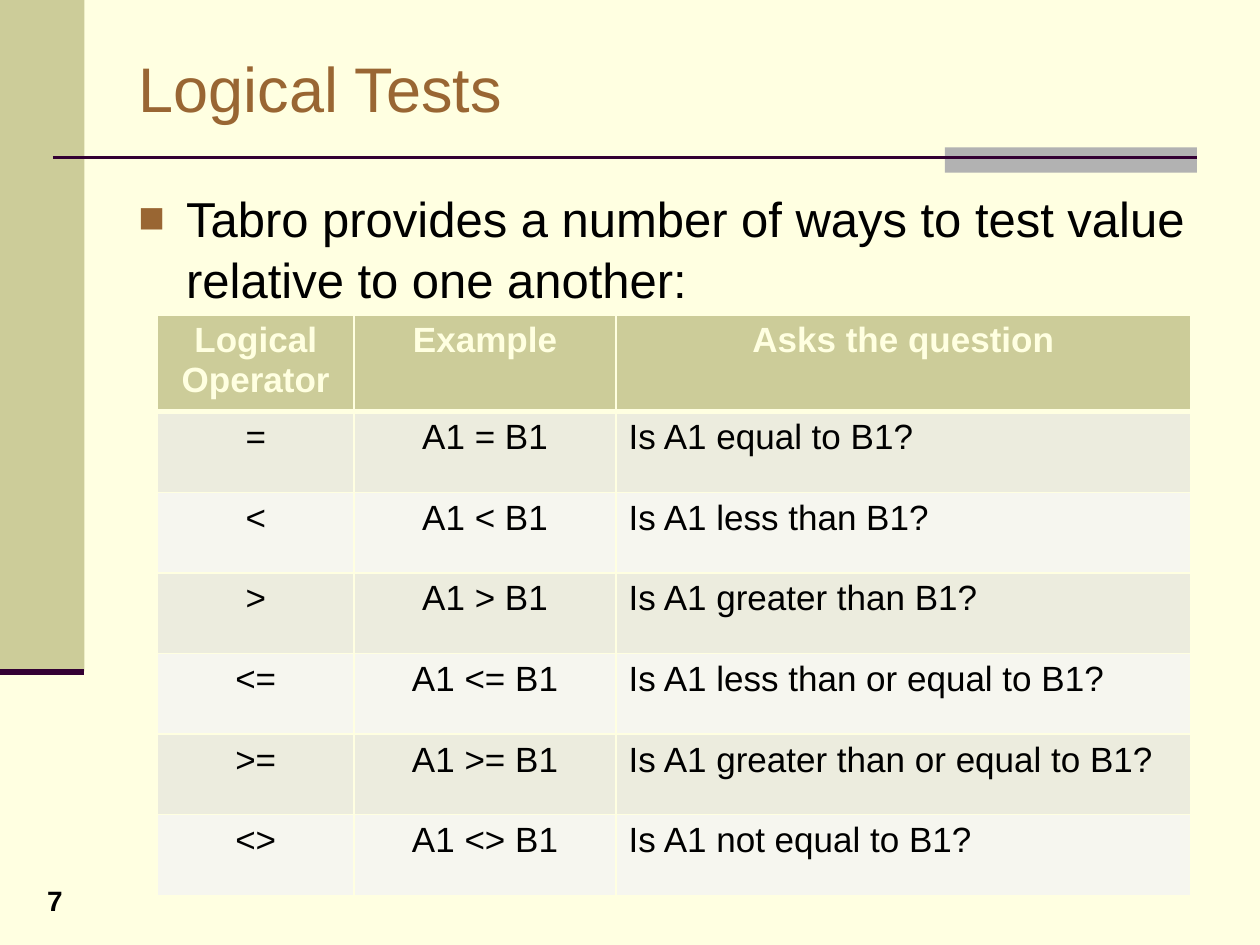
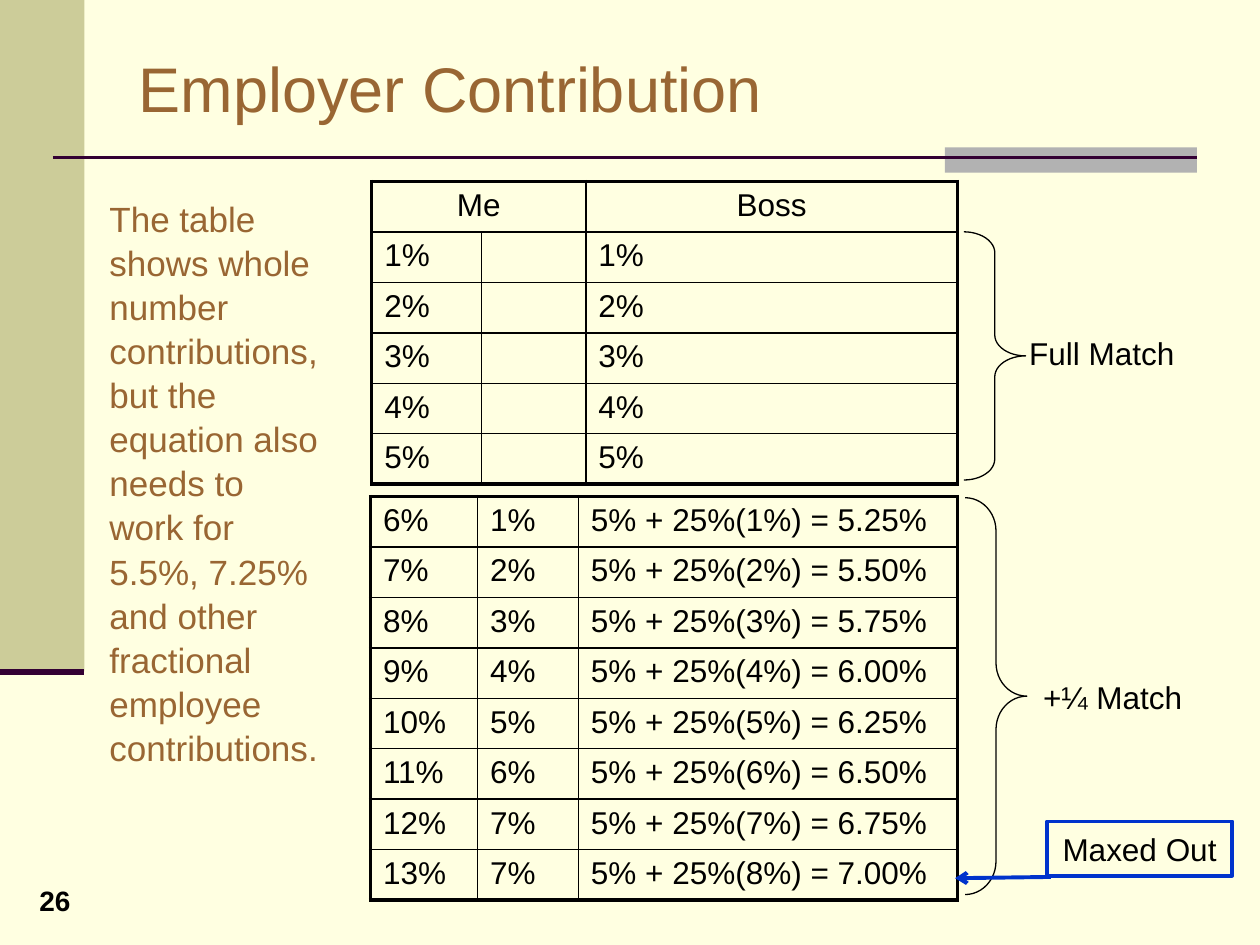
from dataclasses import dataclass

from lxml import etree
from pptx import Presentation
from pptx.dml.color import RGBColor
from pptx.enum.shapes import MSO_CONNECTOR, MSO_SHAPE, MSO_SHAPE_TYPE as ShapeType
from pptx.enum.text import MSO_ANCHOR, PP_ALIGN as Align
from pptx.oxml.ns import qn
from pptx.util import Inches, Pt


@dataclass(frozen=True)
class Theme:
    font: str = "Arial"
    paper: RGBColor = RGBColor(0xFF, 0xFF, 0xE1)
    sand: RGBColor = RGBColor(0xCC, 0xCC, 0x99)
    band_dark: RGBColor = RGBColor(0xEC, 0xEC, 0xDE)
    band_light: RGBColor = RGBColor(0xF6, 0xF6, 0xEF)
    gray: RGBColor = RGBColor(0xB2, 0xB2, 0xB2)
    plum: RGBColor = RGBColor(0x33, 0x00, 0x33)
    brown: RGBColor = RGBColor(0x99, 0x66, 0x33)
    blue: RGBColor = RGBColor(0x00, 0x33, 0xCC)
    black: RGBColor = RGBColor(0x00, 0x00, 0x00)
    title_size: int = 36
    body_size: int = 28
    note_size: int = 20
    label_size: int = 18
    number_size: int = 16


theme = Theme()


def add_text(slide, box, text, size, color=theme.black, bold=False, align=Align.LEFT):
    shape = slide.shapes.add_textbox(*map(Inches, box))
    shape.text_frame.word_wrap = True
    shape.text_frame.text = text
    paragraph = shape.text_frame.paragraphs[0]
    paragraph.alignment = align
    paragraph.line_spacing = 1.05
    font = paragraph.runs[0].font
    font.name, font.size, font.bold = theme.font, Pt(size), bold
    font.color.rgb = color
    return shape


def add_grid(slide, corner, widths, heights, rows, size, line_color, edge, header_line):
    """Add an unfilled table: lines of 1 pt inside, edge pt outside, header_line pt below row 0."""
    table = slide.shapes.add_table(len(rows), len(widths), *map(Inches, corner),
                                   Inches(sum(widths)), Inches(sum(heights))).table
    table.first_row = table.horz_banding = False
    for column, width in zip(table.columns, widths):
        column.width = Inches(width)
    for row, height in zip(table.rows, heights):
        row.height = Inches(height)
    last_row, last_column = len(rows) - 1, len(widths) - 1
    for r, texts in enumerate(rows):
        for c, text in enumerate(texts):
            cell = table.cell(r, c)
            cell.text = text
            paragraph = cell.text_frame.paragraphs[0]
            paragraph.font.size = Pt(size)
            for run in paragraph.runs:
                run.font.name, run.font.size, run.font.bold = theme.font, Pt(size), False
                run.font.color.rgb = theme.black
            borders = {
                "a:lnL": edge if c == 0 else 1,
                "a:lnR": edge if c == last_column else 1,
                "a:lnT": edge if r == 0 else header_line if r == 1 else 1,
                "a:lnB": edge if r == last_row else header_line if r == 0 else 1,
            }
            properties = cell._tc.get_or_add_tcPr()
            for tag, width in borders.items():
                line = etree.SubElement(properties, qn(tag), w=str(Pt(width)))
                fill = etree.SubElement(line, qn("a:solidFill"))
                etree.SubElement(fill, qn("a:srgbClr"), val=str(line_color))
            cell.fill.background()
    return table


presentation = Presentation()
presentation.slide_width, presentation.slide_height = Inches(10), Inches(7.5)
background = presentation.slide_master.background.fill
background.solid()
background.fore_color.rgb = theme.paper

# Frame, title and number of every slide
for title_text, number in (("Logical Tests", "7"), ("Employer Contribution", "26")):
    slide = presentation.slides.add_slide(presentation.slide_layouts[5])
    for box, color in (((0, 0, 0.67, 5.33), theme.sand), ((7.5, 1.17, 2, 0.2), theme.gray)):
        band = slide.shapes.add_shape(MSO_SHAPE.RECTANGLE, *map(Inches, box))
        band.fill.solid()
        band.fill.fore_color.rgb = color
        band.line.fill.background()
    for ends, width in (((0.42, 1.25, 9.5, 1.25), 1.5), ((0, 5.33, 0.67, 5.33), 3.5)):
        rule = slide.shapes.add_connector(MSO_CONNECTOR.STRAIGHT, *map(Inches, ends))
        rule.line.color.rgb = theme.plum
        rule.line.width = Pt(width)
    title = slide.shapes.title
    title.left, title.top, title.width, title.height = map(Inches, (1, 0.3, 8.5, 0.78))
    title.text_frame.text = title_text
    title.text_frame.vertical_anchor = MSO_ANCHOR.MIDDLE
    paragraph = title.text_frame.paragraphs[0]
    paragraph.alignment = Align.LEFT
    font = paragraph.runs[0].font
    font.name, font.size = theme.font, Pt(theme.title_size)
    font.color.rgb = theme.brown
    add_text(slide, (0.18, 6.95, 0.51, 0.33), number, theme.number_size,
             bold=True, align=Align.CENTER)

tests_slide, employer_slide = presentation.slides

# Logical Tests
body = add_text(tests_slide, (1, 1.42, 8.5, 1.05),
                "Tabro provides a number of ways to test value relative to one another:",
                theme.body_size)
properties = body.text_frame.paragraphs[0]._p.get_or_add_pPr()
properties.set("marL", str(Inches(0.38)))
properties.set("indent", str(Inches(-0.38)))
bullet_color = etree.SubElement(properties, qn("a:buClr"))
etree.SubElement(bullet_color, qn("a:srgbClr"), val=str(theme.brown))
etree.SubElement(properties, qn("a:buSzPct"), val="90000")
etree.SubElement(properties, qn("a:buFont"), typeface=theme.font)
etree.SubElement(properties, qn("a:buChar"), char="■")

operators = (
    ("=", "equal to"),
    ("<", "less than"),
    (">", "greater than"),
    ("<=", "less than or equal to"),
    (">=", "greater than or equal to"),
    ("<>", "not equal to"),
)
test_rows = [("Logical Operator", "Example", "Asks the question")]
test_rows += [(sign, f"A1 {sign} B1", f"Is A1 {words} B1?") for sign, words in operators]
tests = add_grid(tests_slide, (1.25, 2.5), (1.56, 2.08, 4.56), [0.7] + [0.64] * 6,
                 test_rows, theme.note_size, theme.paper, edge=1, header_line=3)
for r, row in enumerate(tests.rows):
    for c, cell in enumerate(row.cells):
        cell.fill.solid()
        cell.fill.fore_color.rgb = (theme.sand if r == 0 else
                                    theme.band_dark if r % 2 else theme.band_light)
        paragraph = cell.text_frame.paragraphs[0]
        if r == 0 or c < 2:
            paragraph.alignment = Align.CENTER
        if r == 0:
            paragraph.runs[0].font.bold = True
            paragraph.runs[0].font.color.rgb = theme.paper

# Employer Contribution
full_rows = [("Me", "", "Boss")] + [(f"{rate}%", "", f"{rate}%") for rate in range(1, 6)]
full_match = add_grid(employer_slide, (2.95, 1.44), (0.87, 0.83, 2.95), [0.38] * 6,
                      full_rows, theme.label_size, theme.black, edge=2.25, header_line=1)
full_match.cell(0, 0).merge(full_match.cell(0, 1))
for c in (0, 2):
    full_match.cell(0, c).text_frame.paragraphs[0].alignment = Align.CENTER

quarter_rows = [(f"{rate}%", f"{min(rate - 5, 7)}%",
                 f"5% + 25%({rate - 5}%) = {5 + 0.25 * (rate - 5):.2f}%")
                for rate in range(6, 14)]
add_grid(employer_slide, (2.94, 3.94), (0.85, 0.8, 3.01), [0.38] * 8,
         quarter_rows, theme.label_size, theme.black, edge=2.25, header_line=1)

for box, curl in (((7.65, 1.84, 0.49, 1.97), 0.34), ((7.66, 3.95, 0.49, 3.15), 0.54)):
    brace = employer_slide.shapes.add_shape(MSO_SHAPE.RIGHT_BRACE, *map(Inches, box))
    brace.adjustments[0] = curl
    brace.adjustments[1] = 0.5
    brace.fill.background()
    brace.line.color.rgb = theme.black
    brace.line.width = Pt(0.75)

add_text(employer_slide, (8.07, 2.59, 1.58, 0.4), "Full Match", theme.label_size)
add_text(employer_slide, (8.18, 5.32, 1.39, 0.4), "+¼ Match", theme.label_size)
add_text(employer_slide, (0.77, 1.5, 1.91, 4.43),
         "The table shows whole number contributions, but the equation also needs to work "
         "for 5.5%, 7.25% and other fractional employee contributions.",
         theme.note_size, theme.brown)
maxed_out = add_text(employer_slide, (8.31, 6.52, 1.47, 0.43), "Maxed Out",
                     theme.label_size, align=Align.CENTER)
arrow = employer_slide.shapes.add_connector(MSO_CONNECTOR.STRAIGHT,
                                            *map(Inches, (8.34, 6.96, 7.58, 6.97)))
for outlined in (maxed_out, arrow):
    outlined.line.color.rgb = theme.blue
    outlined.line.width = Pt(2.25)
etree.SubElement(arrow.line._get_or_add_ln(), qn("a:tailEnd"), type="arrow")

# No shadows anywhere
for slide in presentation.slides:
    for shape in slide.shapes:
        if shape.shape_type == ShapeType.LINE:
            etree.SubElement(shape._element.spPr, qn("a:effectLst"))
        elif shape.shape_type == ShapeType.AUTO_SHAPE:
            shape.shadow.inherit = False

presentation.save("out.pptx")
